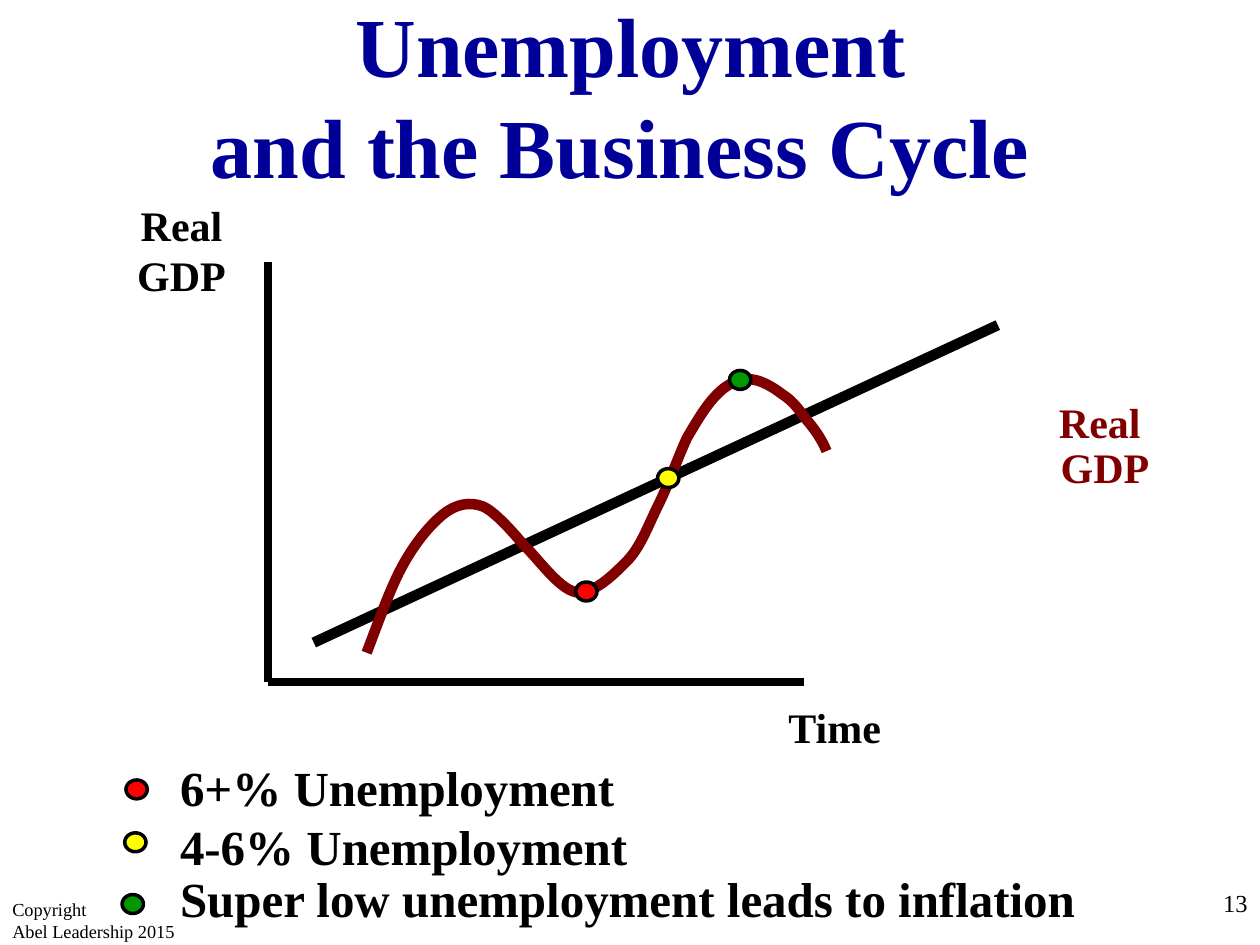
import pptx
import pptx.util
import pptx.dml.color
import pptx.enum.shapes
import pptx.enum.text
import pptx.oxml.ns
import pptx.oxml.xmlchemy
from dataclasses import dataclass

Pt = pptx.util.Pt
ALIGN = pptx.enum.text.PP_ALIGN


@dataclass(frozen=True)
class Theme:
    font: str = "Times New Roman"
    title: str = "000099"
    ink: str = "000000"
    cycle: str = "800000"
    high: str = "FF0000"
    normal: str = "FFFF00"
    low: str = "009900"
    title_size: float = 48
    legend_size: float = 28
    label_size: float = 24
    number_size: float = 14
    credit_size: float = 10.5
    trend_width: float = 6
    axis_width: float = 4.5
    dot_width: float = 2


THEME = Theme()

# Content: boxes are left, top, width, height in points
TITLE = ["Unemployment", "and the Business Cycle "]
TITLE_BOX = (5.8, -7.2, 709.2, 123.1)

LABELS = [
    (["Time"], (416.9, 397.4, 120.2, 36.7), dict(align=ALIGN.CENTER)),
    (["Real GDP"], (54, 110.2, 99.4, 65.5), dict(align=ALIGN.CENTER)),
    (["Real ", "GDP"], (542.9, 226.1, 177.1, 59.8),
     dict(align=ALIGN.CENTER, color=THEME.cycle, line_spacing=0.9)),
]
FOOTERS = [
    (["13"], (570.2, 504, 149.8, 36),
     dict(size=THEME.number_size, bold=False, align=ALIGN.RIGHT)),
    (["Copyright", "Abel Leadership 2015"], (0, 509.8, 120.2, 36),
     dict(size=THEME.credit_size, bold=False)),
]

# Text, colour, position of the dot on the curve and in the legend, text spacing
UNEMPLOYMENT_LEVELS = [
    ("6+% Unemployment", THEME.high, (329, 332.6), (72, 445.7), None),
    ("4-6% Unemployment", THEME.normal, (375.8, 267.8), (71.3, 475.9), None),
    ("Super low unemployment leads to inflation", THEME.low,
     (416.9, 211.7), (69.8, 511.2), 0.9),
]
LEGEND_LEFT, LEGEND_TOP, LEGEND_STEP = 95.8, 429.1, 33.85
LEGEND_WIDTH, LEGEND_HEIGHT = 601, 41
DOT_SIZE = (12.2, 10.8)

ORIGIN = (153.4, 389.5)
AXES = [((153.4, 149.8), ORIGIN), (ORIGIN, (459.4, 389.5))]
TREND = ((179.3, 367.2), (570.2, 185.8))

# Cycle: a start, then two control points and an end for each curve segment
CYCLE_START = (209.5, 373)
CYCLE_SEGMENTS = [
    ((216.7, 354.2), (223.2, 335.5), (230.4, 322.6)),
    ((237.6, 309.6), (246.2, 299.5), (253.4, 293.8)),
    ((260.6, 288), (268.6, 286.6), (275.8, 289.4)),
    ((283.7, 292.3), (298.8, 311), (298.8, 311)),
    ((307.4, 319), (319, 336.2), (329, 338.4)),
    ((339.1, 339.8), (349.9, 329), (357.8, 321.1)),
    ((365.8, 313.2), (370.1, 301), (375.8, 289.4)),
    ((381.6, 277.9), (387.4, 261.4), (392.4, 250.6)),
    ((398.2, 240.5), (403.9, 231.1), (409.7, 225.4)),
    ((415.4, 219.6), (421.2, 216.7), (427.7, 216.7)),
    ((434.2, 216.7), (441.4, 221), (447.1, 225.4)),
    ((452.9, 229), (456.5, 234), (460.8, 239.8)),
    ((465.1, 244.8), (469.4, 250.6), (472.3, 257.8)),
]


def rgb(color):
    return pptx.dml.color.RGBColor.from_string(color)


def lengths(values):
    return [Pt(value) for value in values]


def write(frame, lines, *, size=THEME.label_size, color=THEME.ink, bold=True,
          align=ALIGN.LEFT, line_spacing=None):
    frame.word_wrap = True
    frame.auto_size = pptx.enum.text.MSO_AUTO_SIZE.NONE
    frame.vertical_anchor = pptx.enum.text.MSO_ANCHOR.TOP
    for index, line in enumerate(lines):
        paragraph = frame.add_paragraph() if index else frame.paragraphs[0]
        paragraph.alignment = align
        paragraph.line_spacing = line_spacing
        run = paragraph.add_run()
        run.text = line
        run.font.name = THEME.font
        run.font.size = Pt(size)
        run.font.bold = bold
        run.font.color.rgb = rgb(color)


def add_text(slide, lines, box, **text_format):
    write(slide.shapes.add_textbox(*lengths(box)).text_frame, lines, **text_format)


def set_line(shape, color, width):
    shape.line.color.rgb = rgb(color)
    shape.line.width = Pt(width)


def add_line(slide, start, end, width):
    line = slide.shapes.add_connector(
        pptx.enum.shapes.MSO_CONNECTOR.STRAIGHT, *lengths(start + end))
    set_line(line, THEME.ink, width)
    line._element.spPr.append(pptx.oxml.xmlchemy.OxmlElement("a:effectLst"))


def add_dot(slide, position, color):
    dot = slide.shapes.add_shape(
        pptx.enum.shapes.MSO_SHAPE.FLOWCHART_CONNECTOR, *lengths(position + DOT_SIZE))
    dot.shadow.inherit = False
    dot.fill.solid()
    dot.fill.fore_color.rgb = rgb(color)
    set_line(dot, THEME.ink, THEME.dot_width)


def add_cycle(slide):
    builder = slide.shapes.build_freeform(*lengths(CYCLE_START))
    builder.add_line_segments(
        [lengths(point) for segment in CYCLE_SEGMENTS for point in segment], close=False)
    cycle = builder.convert_to_shape()
    cycle.shadow.inherit = False
    cycle.fill.background()
    set_line(cycle, THEME.cycle, THEME.trend_width)
    # Turn every three straight steps into one Bezier segment
    steps = list(cycle._element.iter(pptx.oxml.ns.qn("a:lnTo")))
    for first in range(0, len(steps), 3):
        curve = pptx.oxml.xmlchemy.OxmlElement("a:cubicBezTo")
        steps[first].addprevious(curve)
        for step in steps[first:first + 3]:
            curve.append(step[0])
            step.getparent().remove(step)


def main():
    deck = pptx.Presentation()
    deck.slide_width, deck.slide_height = Pt(720), Pt(540)
    slide = deck.slides.add_slide(deck.slide_layouts[5])

    # Title
    title = slide.shapes.title
    title.left, title.top, title.width, title.height = lengths(TITLE_BOX)
    write(title.text_frame, TITLE, size=THEME.title_size, color=THEME.title,
          align=ALIGN.CENTER)

    # Graph
    add_line(slide, *TREND, THEME.trend_width)
    add_cycle(slide)
    for start, end in AXES:
        add_line(slide, start, end, THEME.axis_width)

    # Graph labels and footers
    for lines, box, text_format in LABELS + FOOTERS:
        add_text(slide, lines, box, **text_format)

    # Dots on the curve and their legend
    for row, (level, color, on_curve, in_legend, spacing) in enumerate(UNEMPLOYMENT_LEVELS):
        add_dot(slide, on_curve, color)
        add_dot(slide, in_legend, color)
        box = (LEGEND_LEFT, LEGEND_TOP + row * LEGEND_STEP, LEGEND_WIDTH, LEGEND_HEIGHT)
        add_text(slide, [level], box, size=THEME.legend_size, line_spacing=spacing)

    deck.save("out.pptx")


if __name__ == "__main__":
    main()
